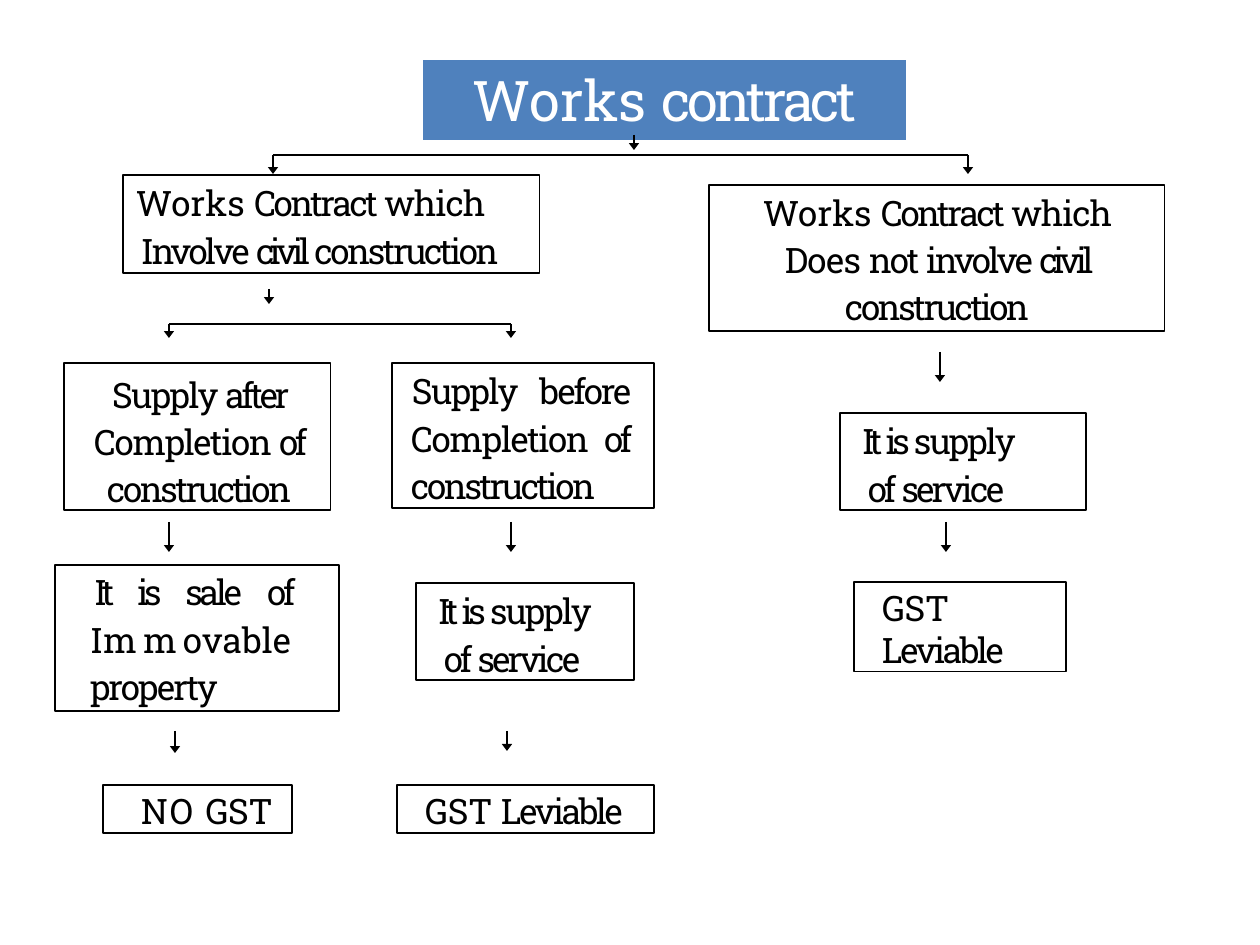
from pptx import Presentation, util as u
from pptx.dml.color import RGBColor
from pptx.enum import shapes, text
from pptx.oxml.ns import qn
from lxml import etree

PX = 914400 // 126
FONT = "Roboto Slab"
BLACK = RGBColor(0, 0, 0)
WHITE = RGBColor(255, 255, 255)
BLUE = RGBColor(0x4F, 0x81, 0xBD)
L, C, J = text.PP_ALIGN.LEFT, text.PP_ALIGN.CENTER, text.PP_ALIGN.JUSTIFY

TITLE = [("Works ", 0.1), ("contract", -2)]
TITLE_BOX = (422, 59, 485, 75)

WORKS = [("Works ", 0.1), ("Contract ", -1.4), ("which ", -0.6)]
COMPLETION = [("Completion ", -0.8), ("of ", -1.9), ("construction", -1.4)]
SERVICE = [("It ", -3), ("is ", -2.6), ("supply ", -1.1), ("of ", -1.9), ("service", -1.6)]
LEVIABLE = [("GST ", -0.1), ("Leviable", -1.4)]

# box (left, top, width, height), runs, format with margins in px
BOXES = [
    ((123, 175, 417, 98), WORKS + [("Involve ", -1.4), ("civil ", -2.6), ("construction", -1.4)],
     dict(left=18, first=-5, top=2)),
    ((709, 185, 456, 146), WORKS + [("Does ", -0.5), ("not ", -1.1), ("involve ", -1.4),
                                    ("civil ", -2.6), ("construction", -1.4)],
     dict(align=C, left=31, right=31, top=1)),
    ((64, 363, 267, 147), [("Supply ", -0.9), ("after ", -1.9)] + COMPLETION,
     dict(align=C, left=11, right=8, top=5, before=0)),
    ((392, 363, 262, 145), [("Supply ", -0.9), ("before ", -1.2)] + COMPLETION,
     dict(align=J, left=19, first=1, right=25, top=2)),
    ((55, 565, 284, 146), [("It ", -3), ("is ", -2.6), ("sale ", -1.8), ("of ", -1.9), ("I", -3),
                           ("mm", 3.5), ("o", -0.4), ("v", -0.9), ("a", -0.8), ("b", -0.1),
                           ("l", -3.5), ("e ", -0.9), ("property", -1.1)],
     dict(align=J, left=35, first=4, right=47, top=1)),
    ((416, 583, 218, 97), SERVICE, dict(left=28, first=-6, right=25, top=2)),
    ((840, 413, 246, 97), SERVICE, dict(left=28, first=-6, right=55, top=2)),
    ((103, 785, 189, 48), [("NO ", 1), ("GST", -0.1)],
     dict(left=38, top=5, before=2.9, spacing=1)),
    ((397, 785, 257, 48), LEVIABLE, dict(left=28, top=5, before=3, spacing=1)),
    ((854, 582, 212, 90), LEVIABLE, dict(left=28, right=25, top=5, before=3, spacing=1)),
]

# (left, right, y)
BRANCHES = [(273, 968, 155), (169, 511, 324)]
# (x, top, bottom)
ARROWS = [(634, 135, 150), (273, 155, 174), (968, 155, 174),
          (269, 289, 304), (169, 324, 338), (511, 324, 338),
          (169, 522, 552), (511, 522, 552), (940, 352, 382), (946, 522, 552),
          (175, 731, 753), (507, 731, 751)]


def px(*values):
    return [v * PX for v in values]


def write(tf, runs, size=20, color=BLACK, align=L, left=0, first=0, right=0,
          before=1.2, spacing=1.12):
    p = tf.paragraphs[0]
    p.alignment, p.space_before, p.line_spacing = align, u.Pt(before), spacing
    pPr = p._p.get_or_add_pPr()
    for name, value in (("marL", left), ("indent", first), ("marR", right)):
        pPr.set(name, str(value * PX))
    for words, gap in runs:
        r = p.add_run()
        r.text = words
        r.font.name, r.font.size, r.font.color.rgb = FONT, u.Pt(size), color
        r._r.get_or_add_rPr().set("spc", str(round(gap * 100)))


def add_box(s, box, runs, top=0, **fmt):
    sp = s.shapes.add_shape(shapes.MSO_SHAPE.RECTANGLE, *px(*box))
    sp.shadow.inherit = False
    sp.fill.background()
    sp.line.color.rgb, sp.line.width = BLACK, u.Pt(0.72)
    tf = sp.text_frame
    tf.word_wrap, tf.vertical_anchor = True, text.MSO_ANCHOR.TOP
    tf.margin_left = tf.margin_right = tf.margin_bottom = 0
    tf.margin_top = top * PX
    write(tf, runs, **fmt)


def add_line(s, x1, y1, x2, y2, width, arrow=False):
    cx = s.shapes.add_connector(shapes.MSO_CONNECTOR.STRAIGHT, *px(x1, y1, x2, y2))
    cx.line.color.rgb, cx.line.width = BLACK, u.Pt(width)
    if arrow:
        etree.SubElement(cx.line._get_or_add_ln(), qn("a:tailEnd"),
                         type="triangle", w="med", len="sm")
    etree.SubElement(cx._element.spPr, qn("a:effectLst"))


def add_title(s):
    table = s.shapes.add_table(1, 1, *px(*TITLE_BOX)).table
    cell = table.cell(0, 0)
    cell.fill.solid()
    cell.fill.fore_color.rgb = BLUE
    cell.margin_left, cell.margin_right, cell.margin_top, cell.margin_bottom = px(15, 15, 4, 4)
    write(cell.text_frame, TITLE, size=32, color=WHITE, align=C, before=1.6, spacing=1)
    for r in cell.text_frame.paragraphs[0].runs:
        r.font.bold = False


def main():
    prs = Presentation()
    prs.slide_width, prs.slide_height = u.Inches(10), u.Inches(7.5)
    s = prs.slides.add_slide(prs.slide_layouts[6])
    for x1, x2, y in BRANCHES:
        add_line(s, x1, y, x2, y, 0.72)
    for box, runs, fmt in BOXES:
        add_box(s, box, runs, **fmt)
    add_title(s)
    for x, top, bottom in ARROWS:
        add_line(s, x, top, x, bottom, 1, arrow=True)
    prs.save("out.pptx")


if __name__ == "__main__":
    main()
